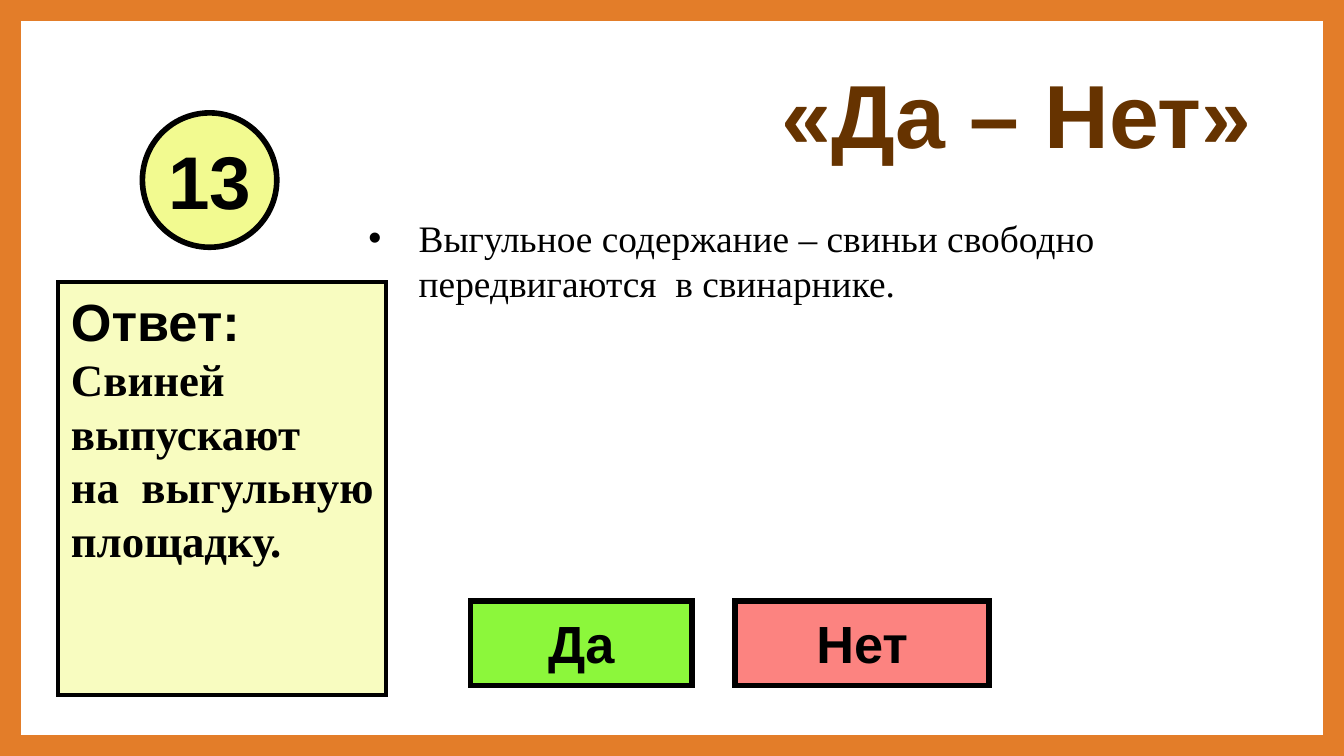
from dataclasses import dataclass

from lxml.etree import SubElement
from pptx import Presentation
from pptx.dml.color import RGBColor
from pptx.enum.shapes import MSO_SHAPE
from pptx.enum.text import MSO_ANCHOR, MSO_AUTO_SIZE, PP_ALIGN
from pptx.oxml.ns import qn
from pptx.util import Inches, Pt


@dataclass(frozen=True)
class Theme:
    sans: str = "Arial"
    serif: str = "Times New Roman"
    ink: str = "000000"
    title: str = "663300"
    frame: str = "E37D29"
    number: str = "F2FA90"
    yes: str = "8CF73B"
    no: str = "FC8380"
    answer: str = "F8FCC0"
    title_pt: int = 48
    number_pt: int = 40
    label_pt: int = 28
    answer_pt: int = 24
    body_pt: int = 20


@dataclass(frozen=True)
class Box:
    left: float
    top: float
    width: float
    height: float


@dataclass(frozen=True)
class Label:
    text: str
    kind: MSO_SHAPE
    box: Box
    fill: str
    size: int


THEME = Theme()
FRAME = Box(0, 0, 10, 10 * 9 / 16)
BUTTON_TOP, BUTTON_HEIGHT = 4.47, 0.63
LABELS = (
    Label("13", MSO_SHAPE.OVAL, Box(1.06, 0.84, 1, 1),
          THEME.number, THEME.number_pt),
    Label("Да", MSO_SHAPE.RECTANGLE, Box(3.5, BUTTON_TOP, 1.65, BUTTON_HEIGHT),
          THEME.yes, THEME.label_pt),
    Label("Нет", MSO_SHAPE.RECTANGLE, Box(5.47, BUTTON_TOP, 1.89, BUTTON_HEIGHT),
          THEME.no, THEME.label_pt),
)
ANSWER = ("Ответ:", "Свиней", "выпускают", "на  выгульную", "площадку.")


def place(sp, box: Box) -> None:
    sp.left, sp.top = Inches(box.left), Inches(box.top)
    sp.width, sp.height = Inches(box.width), Inches(box.height)


def style(p, font: str, size: int, color: str = THEME.ink, bold: bool = True) -> None:
    for r in p.runs:
        r.font.name, r.font.size, r.font.bold = font, Pt(size), bold
        r.font.color.rgb = RGBColor.from_string(color)


def add_shape(slide, kind: MSO_SHAPE, box: Box, fill: str, line: str, width: float):
    """Add a filled, outlined shape with sharp corners and no shadow."""
    sp = slide.shapes.add_shape(kind, 0, 0, 0, 0)
    place(sp, box)
    sp.shadow.inherit = False
    sp.fill.solid()
    sp.fill.fore_color.rgb = RGBColor.from_string(fill)
    sp.line.color.rgb = RGBColor.from_string(line)
    sp.line.width = Pt(width)
    SubElement(sp.line._get_or_add_ln(), qn("a:miter"), lim="800000")
    return sp


def add_label(slide, label: Label) -> None:
    sp = add_shape(slide, label.kind, label.box, label.fill, THEME.ink, 3)
    tf = sp.text_frame
    tf.text = label.text
    tf.word_wrap = False
    tf.vertical_anchor = MSO_ANCHOR.MIDDLE
    p = tf.paragraphs[0]
    p.alignment = PP_ALIGN.CENTER
    style(p, THEME.sans, label.size)


def add_answer(slide) -> None:
    sp = add_shape(slide, MSO_SHAPE.RECTANGLE, Box(0.43, 2.1, 2.44, 3.07),
                   THEME.answer, THEME.ink, 2.25)
    tf = sp.text_frame
    tf.text = "\n".join(ANSWER)
    tf.word_wrap = True
    tf.margin_right = 0
    tf.vertical_anchor = MSO_ANCHOR.TOP
    for p in tf.paragraphs:
        p.alignment = PP_ALIGN.LEFT
        style(p, THEME.serif, THEME.answer_pt)
    style(tf.paragraphs[0], THEME.sans, THEME.label_pt)


def fill_placeholder(sp, box: Box, text: str):
    """Move a placeholder, set its text and return the paragraph."""
    place(sp, box)
    tf = sp.text_frame
    tf.text = text
    tf.word_wrap = True
    tf.auto_size = MSO_AUTO_SIZE.NONE
    return tf.paragraphs[0]


def main() -> None:
    prs = Presentation()
    prs.slide_width, prs.slide_height = Inches(FRAME.width), Inches(FRAME.height)
    slide = prs.slides.add_slide(prs.slide_layouts[1])

    frame = add_shape(slide, MSO_SHAPE.FRAME, FRAME, THEME.frame, THEME.frame, 2)
    frame.adjustments[0] = 0.025

    p = fill_placeholder(slide.shapes.title, Box(5.47, 0.37, 4.19, 0.94), "«Да – Нет»")
    p.alignment = PP_ALIGN.CENTER
    style(p, THEME.sans, THEME.title_pt, THEME.title)

    p = fill_placeholder(
        slide.placeholders[1], Box(2.64, 1.55, 6.86, 3.71),
        "Выгульное содержание – свиньи свободно  передвигаются  в свинарнике.")
    p.space_before = Pt(0)
    style(p, THEME.serif, THEME.body_pt, bold=False)

    for label in LABELS:
        add_label(slide, label)
    add_answer(slide)
    prs.save("out.pptx")


if __name__ == "__main__":
    main()
